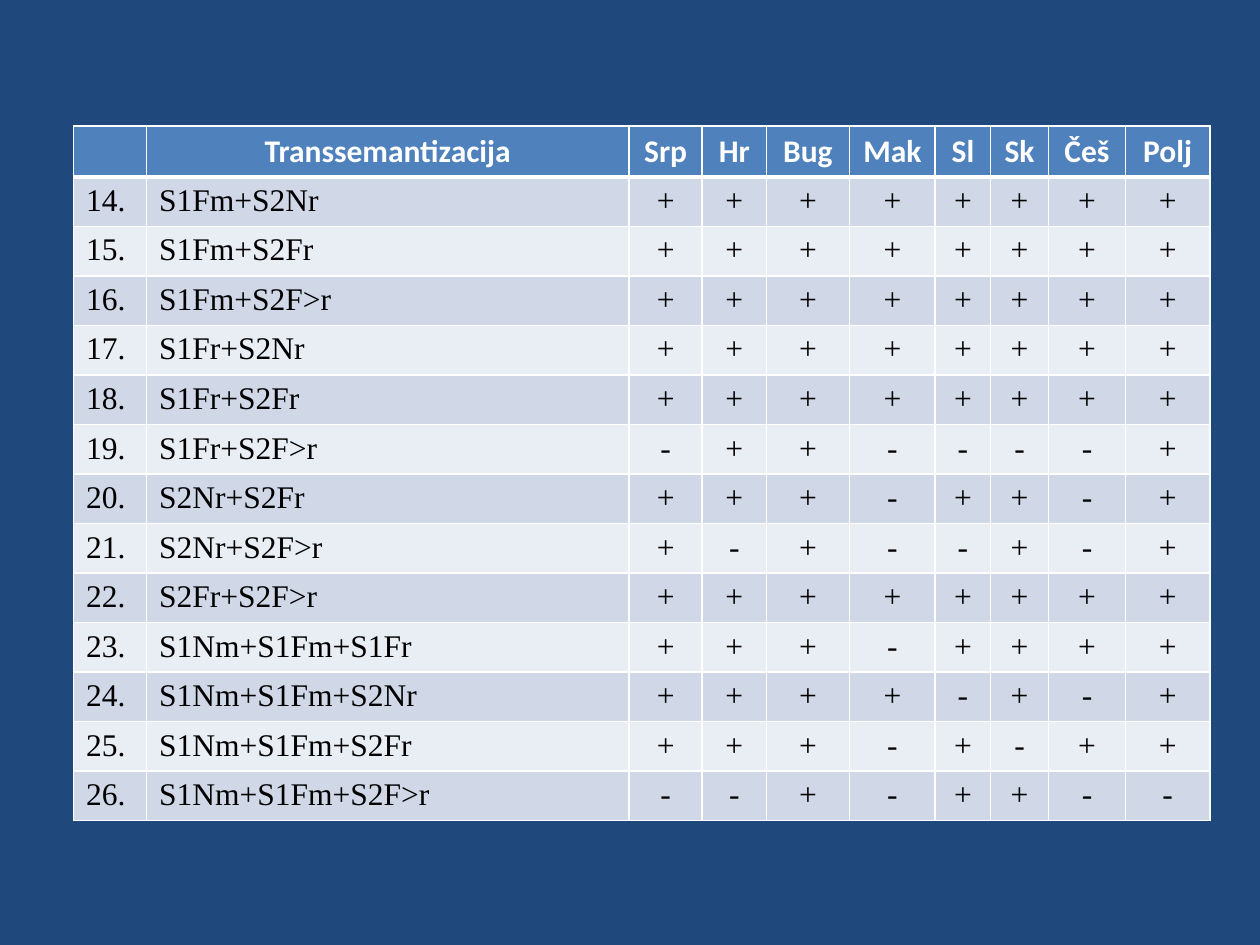
from pptx import Presentation
from pptx.dml.color import RGBColor as Rgb
from pptx.enum.text import PP_ALIGN as Align
from pptx.oxml import parse_xml
from pptx.oxml.ns import nsdecls
from pptx.util import Inches, Pt

COLORS = {
    "background": "1F497D",
    "header": "4F81BD",
    "odd": "D0D8E8",
    "even": "E9EDF4",
    "border": "FFFFFF",
    "header_text": "FFFFFF",
    "body_text": "000000",
}
LANGUAGES = ["Srp", "Hr", "Bug", "Mak", "Sl", "Sk", "Češ", "Polj"]
FIRST_NUMBER = 14
PATTERNS = [
    ("S1Fm+S2Nr", "++++++++"),
    ("S1Fm+S2Fr", "++++++++"),
    ("S1Fm+S2F>r", "++++++++"),
    ("S1Fr+S2Nr", "++++++++"),
    ("S1Fr+S2Fr", "++++++++"),
    ("S1Fr+S2F>r", "-++----+"),
    ("S2Nr+S2Fr", "+++-++-+"),
    ("S2Nr+S2F>r", "+-+--+-+"),
    ("S2Fr+S2F>r", "++++++++"),
    ("S1Nm+S1Fm+S1Fr", "+++-++++"),
    ("S1Nm+S1Fm+S2Nr", "++++-+-+"),
    ("S1Nm+S1Fm+S2Fr", "+++-+-++"),
    ("S1Nm+S1Fm+S2F>r", "--+-++--"),
]
COLUMN_PERCENTS = [5.8, 38.3, 5.8, 5.1, 6.6, 6.8, 4.4, 4.6, 6.1, 6.7]


class Deck:
    header_font = "Calibri"
    body_font = "Times New Roman"
    text_size = Pt(18)

    def __init__(self, width, height):
        self.show = Presentation()
        self.show.slide_width, self.show.slide_height = width, height
        self.slide = None

    def add_slide(self):
        self.slide = self.show.slides.add_slide(self.show.slide_layouts[6])
        fill = self.slide.background.fill
        fill.solid()
        fill.fore_color.rgb = Rgb.from_string(COLORS["background"])

    def across(self, percent):
        return round(self.show.slide_width * percent / 100)

    def down(self, percent):
        return round(self.show.slide_height * percent / 100)

    def add_borders(self, cell, bottom):
        properties = cell._tc.get_or_add_tcPr()
        widths = {"lnL": 1, "lnR": 1, "lnT": 1, "lnB": bottom}
        for position, (side, points) in enumerate(widths.items()):
            line = parse_xml(
                f'<a:{side} {nsdecls("a")} w="{Pt(points)}"><a:solidFill>'
                f'<a:srgbClr val="{COLORS["border"]}"/></a:solidFill></a:{side}>'
            )
            properties.insert(position, line)

    def fill_cell(self, cell, text, band, centred):
        is_header = band == "header"
        cell.fill.solid()
        cell.fill.fore_color.rgb = Rgb.from_string(COLORS[band])
        self.add_borders(cell, bottom=3 if is_header else 1)
        paragraph = cell.text_frame.paragraphs[0]
        paragraph.alignment = Align.CENTER if centred else Align.LEFT
        if not text:
            return
        run = paragraph.add_run()
        run.text = text
        run.font.name = self.header_font if is_header else self.body_font
        run.font.size = self.text_size
        run.font.bold = is_header
        ink = "header_text" if is_header else "body_text"
        run.font.color.rgb = Rgb.from_string(COLORS[ink])

    def add_table(self, rows, left, top, column_percents, row_percent):
        frame = self.slide.shapes.add_table(
            len(rows), len(column_percents), self.across(left), self.down(top),
            self.across(sum(column_percents)), self.down(row_percent * len(rows)),
        )
        grid = frame.table
        for column, percent in zip(grid.columns, column_percents):
            column.width = self.across(percent)
        for row_index, texts in enumerate(rows):
            grid.rows[row_index].height = self.down(row_percent)
            band = "header" if row_index == 0 else ("even", "odd")[row_index % 2]
            for column_index, text in enumerate(texts):
                centred = row_index == 0 or column_index > 1
                self.fill_cell(grid.cell(row_index, column_index), text, band, centred)

    def save(self):
        self.show.save("out.pptx")


def main():
    deck = Deck(Inches(10), Inches(7.5))
    deck.add_slide()
    header = ["", "Transsemantizacija", *LANGUAGES]
    body = [
        [f"{number}.", pattern, *marks]
        for number, (pattern, marks) in enumerate(PATTERNS, FIRST_NUMBER)
    ]
    deck.add_table([header, *body], 5.83, 13.33, COLUMN_PERCENTS, 5.24)
    deck.save()


if __name__ == "__main__":
    main()
